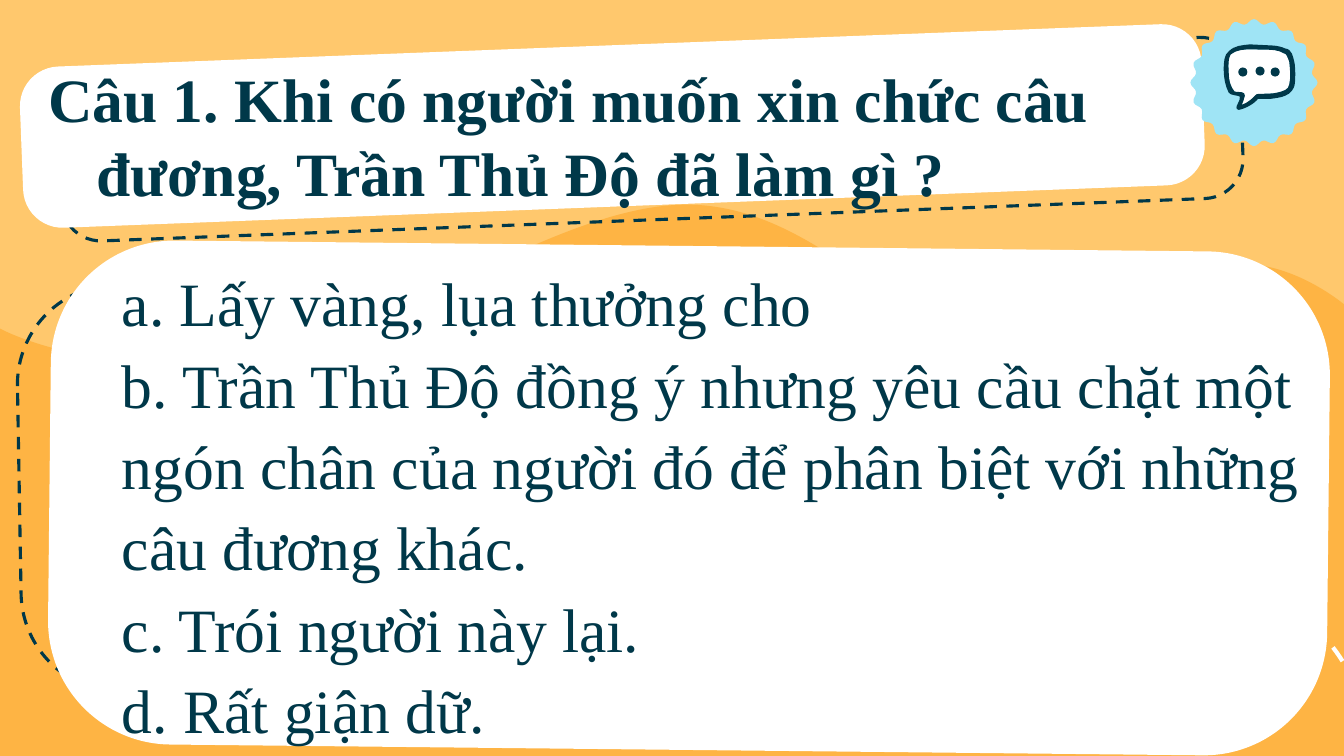
import math

import lxml.etree
import pptx
import pptx.dml.color
import pptx.enum.dml
import pptx.enum.shapes
import pptx.enum.text
import pptx.oxml.ns
import pptx.util

Pt = pptx.util.Pt
qn = pptx.oxml.ns.qn
RGBColor = pptx.dml.color.RGBColor
MSO_SHAPE = pptx.enum.shapes.MSO_SHAPE
ANCHOR = pptx.enum.text.MSO_ANCHOR

# Content
QUESTION = ["Câu 1. Khi có người muốn xin chức câu đương, Trần Thủ Độ đã làm gì ?"]
ANSWERS = [
    "a. Lấy vàng, lụa thưởng cho",
    "b. Trần Thủ Độ đồng ý nhưng yêu cầu chặt một ngón chân của người đó "
    "để phân biệt với những câu đương khác.",
    "c. Trói người này lại.",
    "d. Rất giận dữ.",
]
FONT, TEXT_SIZE = "Times New Roman", 44

# Colours
SKY = RGBColor(0xFF, 0xC8, 0x6D)
HILL = RGBColor(0xFE, 0xB4, 0x44)
NAVY = RGBColor(0x00, 0x38, 0x49)
WHITE = RGBColor(0xFF, 0xFF, 0xFF)
AQUA = RGBColor(0x9F, 0xE4, 0xF5)

# Outlines: a start point, then line ends (2 numbers) or Bezier curves (6 numbers)
HILLS = [
    (490.3, 146.2), (391, 146.2, 257.8, 256.3, 155.5, 259.9),
    (148.3, 259.9, 141.8, 260.6, 136.1, 260.6), (46.1, 260.6, 0, 234.7, 0, 234.7),
    (0, 476.6), (960, 476.6), (960, 217.4),
    (960, 217.4, 925.9, 188.6, 887.8, 188.6), (884.9, 188.6, 882, 188.6, 879.8, 188.6),
    (838.1, 193, 799.9, 228.2, 724.3, 239.8), (720.7, 239.8, 716.4, 240.5, 712.8, 240.5),
    (642.2, 240.5, 584.6, 146.2, 490.3, 146.2),
]
WAVE = [
    (959, 472.3), (950.4, 458.6, 938.9, 445, 928.8, 447.1),
    (916.6, 448.6, 918.7, 472.3, 904.3, 479.5), (887.8, 487.4, 876.2, 463, 858.2, 470.9),
    (843.1, 476.6, 846, 496.8, 832.3, 500.4), (816.5, 505.4, 807.8, 481, 789.8, 483.1),
    (771.8, 485.3, 774, 510.5, 755.3, 516.2), (733.7, 523.4, 722.2, 494.6, 698.4, 500.4),
    (678.2, 505.4, 679.7, 529.9, 660.2, 532.8), (640.8, 535.7, 630.7, 511.9, 610.6, 514.1),
    (595.4, 514.8, 583.9, 531.4, 577.4, 540),
]
BUBBLE_INNER = [
    (893.5, 35.3), (889, 35.3, 883, 35.5, 879.1, 38.9),
    (877.5, 41, 877.3, 46, 877.7, 51.8), (877.7, 58, 879.5, 63, 882, 65.5),
    (885, 66, 889.5, 65, 889.2, 68.4), (888.5, 71, 888, 73, 887, 74.9),
    (891, 73.5, 894, 71, 896.4, 68.4), (897, 67.5, 898, 67, 899.3, 67),
    (904, 67, 909, 67, 912.2, 66.2), (917.3, 65, 920.2, 64, 920.9, 60.5),
    (922, 56, 921.6, 50, 920.9, 43.9), (919.5, 40.3, 918.7, 38.2, 917.3, 38.2),
    (913, 35.5, 908, 35.6, 905, 35.5),
]
BUBBLE_OUTER = [
    (892.8, 31.7), (887, 32.4, 882, 32.4, 877.7, 36.7),
    (874.5, 39, 874.1, 44, 874.1, 49.7), (874.1, 56, 875.5, 62, 877.7, 66.2),
    (879, 68.4, 885, 68, 885.6, 69.1), (886, 72, 884, 73.5, 883.4, 75.6),
    (882.7, 78, 884, 78.5, 884.9, 78.5), (890, 77.5, 896, 74, 898.6, 70.6),
    (907.9, 70.6), (912, 70, 915, 69.7, 918, 68.4),
    (922, 67, 924.5, 63, 924.8, 60.5), (925.5, 55, 925.3, 50, 924.8, 45.4),
    (923.5, 40, 923, 35.3, 918, 34.6), (913, 32.5, 910, 32.6, 906.5, 32.4),
]
DOTS = [(907.6, 48.2), (896.8, 47.5), (884.5, 48.2)]

# Cards: left, top, width, height, rotation, dashed
CARDS = [
    (13.7, 196.6, 913.7, 290.9, 359, True),
    (35.3, 175.7, 913.7, 360, 0.6, False),
    (42.5, 41.8, 844.6, 115.2, 357.8, True),
    (15.1, 32.4, 844.6, 115.2, 357.8, False),
]

# Badge: centre, tip and valley radius, number of scallops
BADGE_X, BADGE_Y, TIP, VALLEY, SCALLOPS = 895.7, 59, 45.4, 41.9, 20

prs = pptx.Presentation()
prs.slide_width, prs.slide_height = Pt(960), Pt(540)
slide = prs.slides.add_slide(prs.slide_layouts[6])
slide.background.fill.solid()
slide.background.fill.fore_color.rgb = SKY


def paint(shape, fill=None, dash=None, width=2.25):
    shape.shadow.inherit = False
    if fill is None:
        shape.fill.background()
    else:
        shape.fill.solid()
        shape.fill.fore_color.rgb = fill
    if dash is None:
        shape.line.fill.background()
    else:
        shape.line.color.rgb = dash
        shape.line.width = Pt(width)
        shape.line.dash_style = pptx.enum.dml.MSO_LINE.DASH


def add_outline(*outlines, close=True, **style):
    builder = None
    for start, *segments in outlines:
        start = [Pt(v) for v in start]
        if builder is None:
            builder = slide.shapes.build_freeform(*start, scale=1)
        else:
            builder.move_to(*start)
        corners = [(Pt(s[i]), Pt(s[i + 1])) for s in segments for i in range(0, len(s), 2)]
        builder.add_line_segments(corners, close=False)
    shape = builder.convert_to_shape()

    # Join each run of three points into one curve, and close each contour
    drawn = next(shape._element.iter(qn("a:path")))
    steps = iter(list(drawn))
    for outline in outlines:
        last = next(steps)
        for segment in outline[1:]:
            last = next(steps)
            if len(segment) == 6:
                last.tag = qn("a:cubicBezTo")
                for _ in range(2):
                    extra = next(steps)
                    last.append(extra[0])
                    drawn.remove(extra)
        if close:
            last.addnext(lxml.etree.Element(qn("a:close")))
    paint(shape, **style)


def add_preset(kind, left, top, width, height, **style):
    shape = slide.shapes.add_shape(kind, Pt(left), Pt(top), Pt(width), Pt(height))
    paint(shape, **style)
    return shape


def add_text(lines, left, top, width, height, anchor, inset, spacing, bold):
    frame = slide.shapes.add_textbox(Pt(left), Pt(top), Pt(width), Pt(height)).text_frame
    frame.word_wrap = True
    frame.vertical_anchor = anchor
    frame.margin_left = frame.margin_right = Pt(7.2)
    frame.margin_top = frame.margin_bottom = Pt(inset)
    frame.text = "\n".join(lines)
    for paragraph in frame.paragraphs:
        paragraph.line_spacing = spacing
        font = paragraph.runs[0].font
        font.name, font.size, font.bold = FONT, Pt(TEXT_SIZE), bold
        font.color.rgb = NAVY
    return frame


def badge_point(step, radius):
    angle = step * math.pi / SCALLOPS
    return BADGE_X + radius * math.sin(angle), BADGE_Y - radius * math.cos(angle)


# Landscape
add_outline(HILLS, fill=HILL)
add_preset(MSO_SHAPE.RECTANGLE, 0, 442, 960, 98, fill=HILL)
add_outline(WAVE, close=False, dash=WHITE, width=3)

# Answer and question cards
for left, top, width, height, rotation, dashed in CARDS:
    style = {"dash": NAVY} if dashed else {"fill": WHITE}
    card = add_preset(MSO_SHAPE.ROUNDED_RECTANGLE, left, top, width, height, **style)
    card.adjustments[0] = 0.245
    card.rotation = rotation

# Scalloped badge with speech bubble
badge = [badge_point(0, TIP)]
for step in range(2 * SCALLOPS):
    near, far = (TIP, VALLEY) if step % 2 == 0 else (VALLEY, TIP)
    badge.append(badge_point(step + 0.4, near) + badge_point(step + 0.6, far)
                 + badge_point(step + 1, far))
add_outline(badge, fill=AQUA)
add_outline(BUBBLE_INNER, fill=WHITE)
add_outline(BUBBLE_OUTER, BUBBLE_INNER, fill=NAVY)
for left, top in DOTS:
    add_preset(MSO_SHAPE.OVAL, left, top, 6.5, 6.5, fill=NAVY)

# Question and answers
question = add_text(QUESTION, 13.7, 109.4, 856.8, 46.8, ANCHOR.BOTTOM, 7.2, 1.0, True)
hanging = question.paragraphs[0]._p.get_or_add_pPr()
hanging.set("marL", str(Pt(48.2)))
hanging.set("indent", str(Pt(-34.6)))
add_text(ANSWERS, 79.9, 180.7, 874.1, 245.5, ANCHOR.TOP, 3.6, 1.1, False)

prs.save("out.pptx")
